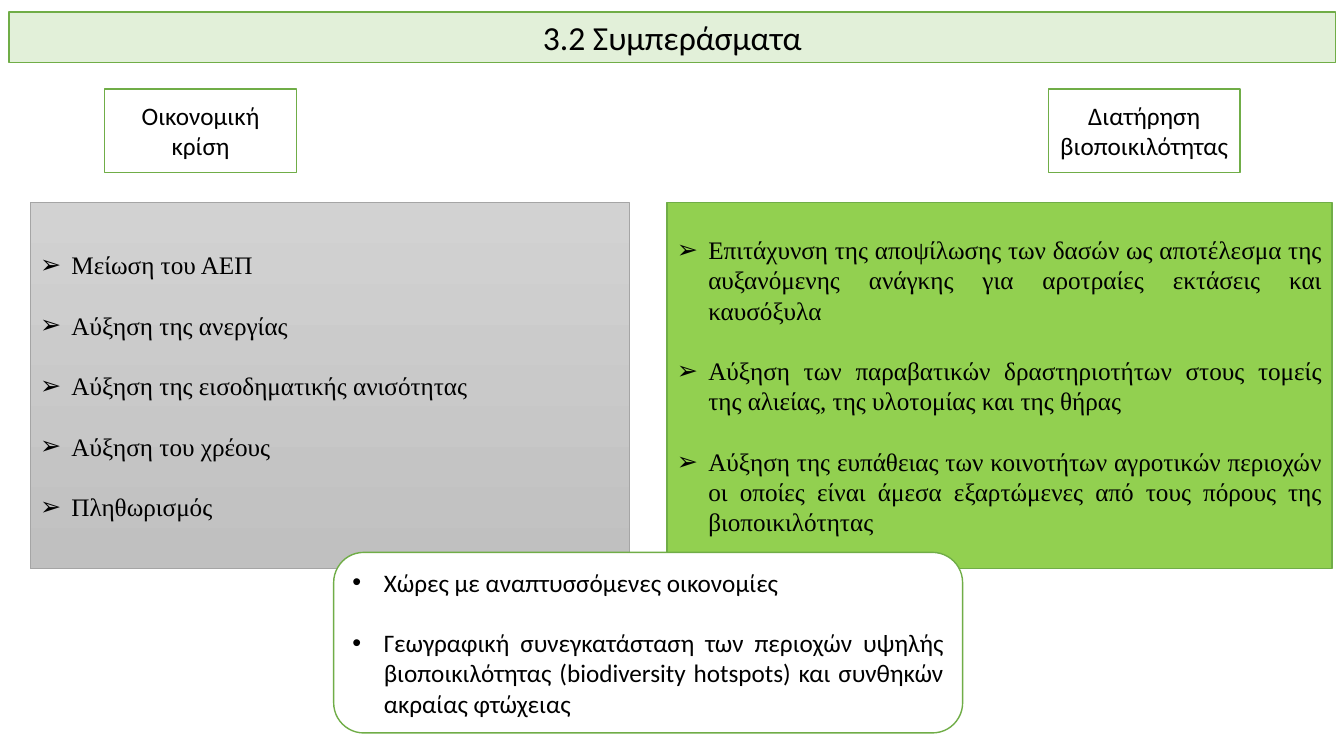
"""Build the conclusions slide: economic crisis and biodiversity conservation."""
from dataclasses import dataclass

from lxml import etree
from pptx import Presentation
from pptx.dml.color import RGBColor
from pptx.enum.shapes import MSO_SHAPE
from pptx.enum.text import MSO_ANCHOR, PP_ALIGN
from pptx.oxml.ns import qn
from pptx.util import Cm, Pt

RECT, ROUND = MSO_SHAPE.RECTANGLE, MSO_SHAPE.ROUNDED_RECTANGLE
CENTER, JUST = PP_ALIGN.CENTER, PP_ALIGN.JUSTIFY
TOP, MIDDLE = MSO_ANCHOR.TOP, MSO_ANCHOR.MIDDLE


@dataclass(frozen=True)
class Theme:
    ink: str = "000000"
    white: str = "FFFFFF"
    green: str = "70AD47"
    pale: str = "E2F0D9"
    lime: str = "92D050"
    gray: str = "A5A5A5"
    shade: tuple = ("D2D2D2", "C0C0C0")
    sans: str = "Calibri"
    serif: str = "Times New Roman"
    head: int = 24
    body: int = 18
    gap: float = 21.6


theme = Theme()
rgb = RGBColor.from_string


def add_box(kind, spot, fill, edge=theme.green, width=1, anchor=MIDDLE):
    box = slide.shapes.add_shape(kind, *map(Cm, spot))
    box.shadow.inherit = False
    if isinstance(fill, tuple):
        box.fill.gradient()
        box.fill.gradient_angle = 270
        for stop, tone in zip(box.fill.gradient_stops, fill):
            stop.color.rgb = rgb(tone)
    else:
        box.fill.solid()
        box.fill.fore_color.rgb = rgb(fill)
    box.line.color.rgb = rgb(edge)
    box.line.width = Pt(width)
    box.text_frame.word_wrap = True
    box.text_frame.vertical_anchor = anchor
    return box.text_frame


def add_text(frame, lines, face, size=theme.body, align=CENTER, mark=None):
    style = {"name": face, "size": Pt(size)}
    for i, line in enumerate(lines):
        para = frame.add_paragraph() if i else frame.paragraphs[0]
        para.alignment = align
        if mark:
            if i:
                para.space_before = Pt(theme.gap)
            props = para._p.get_or_add_pPr()
            props.set("marL", str(Cm(0.79)))
            props.set("indent", str(Cm(-0.79)))
            etree.SubElement(props, qn("a:buFont")).set("typeface", "Arial")
            etree.SubElement(props, qn("a:buChar")).set("char", mark)
        run = para.add_run()
        run.text = line
        for key, value in style.items():
            setattr(run.font, key, value)
        run.font.color.rgb = rgb(theme.ink)


deck = Presentation()
deck.slide_width, deck.slide_height = Cm(33.87), Cm(19.05)
slide = deck.slides.add_slide(deck.slide_layouts[6])

title = add_box(RECT, (0.23, 0.3, 33.43, 1.28), theme.pale, anchor=TOP)
add_text(title, ["3.2 Συμπεράσματα"], theme.sans, theme.head)

labels = [
    (26.42, ["Διατήρηση", "βιοποικιλότητας"]),
    (2.64, ["Οικονομική κρίση"]),
]
for left, lines in labels:
    label = add_box(RECT, (left, 2.24, 4.83, 2.11), theme.white)
    add_text(label, lines, theme.sans)

nature = add_box(RECT, (16.81, 5.11, 16.76, 9.22), theme.lime)
add_text(nature, [
    "Επιτάχυνση της αποψίλωσης των δασών ως αποτέλεσμα της αυξανόμενης "
    "ανάγκης για αροτραίες εκτάσεις και καυσόξυλα",
    "Αύξηση των παραβατικών δραστηριοτήτων στους τομείς της αλιείας, "
    "της υλοτομίας και της θήρας",
    "Αύξηση της ευπάθειας των κοινοτήτων αγροτικών περιοχών οι οποίες "
    "είναι άμεσα εξαρτώμενες από τους πόρους της βιοποικιλότητας",
], theme.serif, align=JUST, mark="➢")

crisis = add_box(RECT, (0.76, 5.11, 15.11, 9.22), theme.shade, theme.gray, 0.5)
add_text(crisis, [
    "Μείωση του ΑΕΠ",
    "Αύξηση της ανεργίας",
    "Αύξηση της εισοδηματικής ανισότητας",
    "Αύξηση του χρέους",
    "Πληθωρισμός",
], theme.serif, align=JUST, mark="➢")

link = add_box(ROUND, (8.41, 13.92, 15.85, 4.55), theme.white)
add_text(link, [
    "Χώρες με αναπτυσσόμενες οικονομίες",
    "Γεωγραφική συνεγκατάσταση των περιοχών υψηλής βιοποικιλότητας "
    "(biodiversity hotspots) και συνθηκών ακραίας φτώχειας",
], theme.sans, align=JUST, mark="•")

deck.save("out.pptx")
